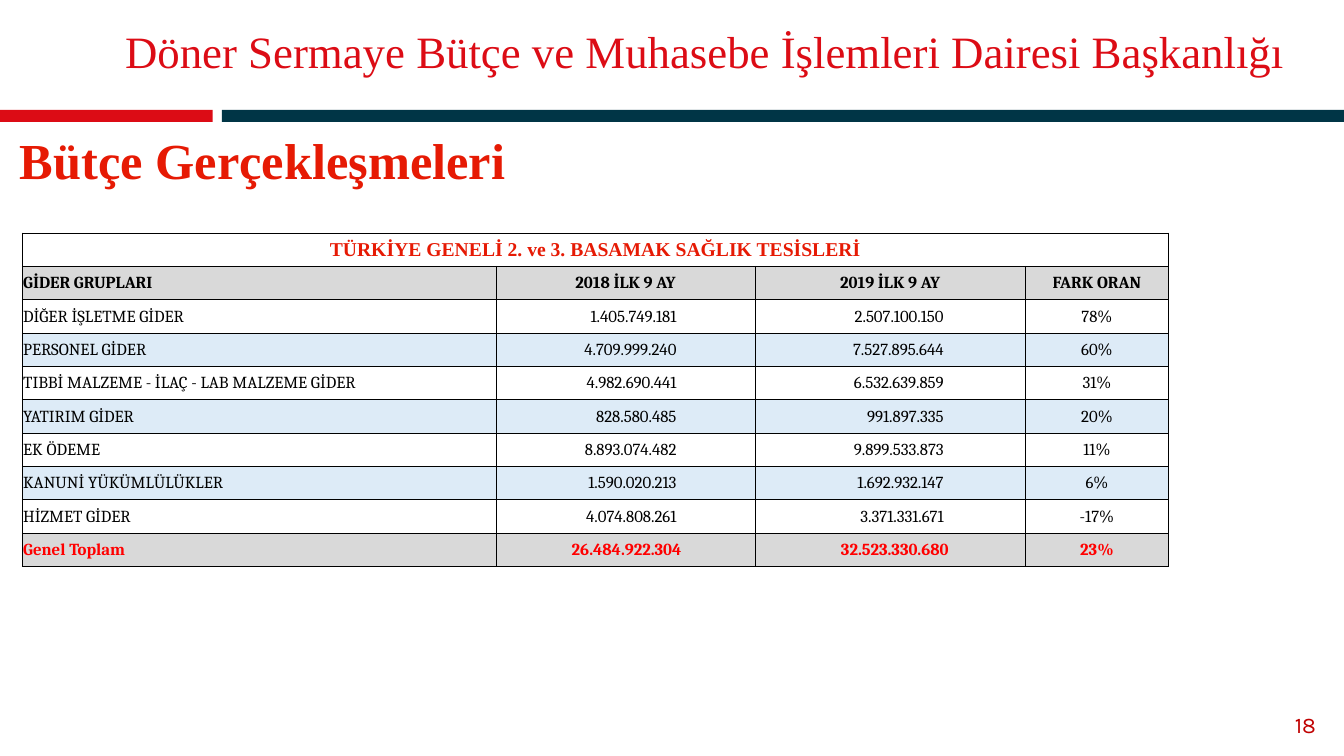
from lxml import etree
from pptx import Presentation
from pptx.dml.color import RGBColor
from pptx.enum.shapes import MSO_SHAPE
from pptx.enum.text import MSO_ANCHOR, MSO_AUTO_SIZE, PP_ALIGN
from pptx.oxml.ns import qn
from pptx.util import Inches, Pt

LEFT, CENTER, RIGHT = PP_ALIGN.LEFT, PP_ALIGN.CENTER, PP_ALIGN.RIGHT
MIDDLE, TOP = MSO_ANCHOR.MIDDLE, MSO_ANCHOR.TOP
RECTANGLE = MSO_SHAPE.RECTANGLE
NO_FIT = MSO_AUTO_SIZE.NONE

COLORS = {
    "red": "DC0C15", "navy": "003546", "heading": "E61A04", "number": "C00000",
    "black": "000000", "total": "FF0000", "gray": "D9D9D9", "blue": "DDEBF7",
}
SERIF = "Times New Roman"
TABLE_FONT = "Cambria"

TABLE_TITLE = "TÜRKİYE GENELİ 2. ve 3. BASAMAK SAĞLIK TESİSLERİ"
HEADER = ("GİDER GRUPLARI", "2018 İLK 9 AY", "2019 İLK 9 AY", "FARK ORAN")
EXPENSES = [
    ("DİĞER İŞLETME GİDER", "1.405.749.181", "2.507.100.150", "78%"),
    ("PERSONEL GİDER", "4.709.999.240", "7.527.895.644", "60%"),
    ("TIBBİ MALZEME - İLAÇ - LAB MALZEME GİDER", "4.982.690.441", "6.532.639.859", "31%"),
    ("YATIRIM GİDER", "828.580.485", "991.897.335", "20%"),
    ("EK ÖDEME", "8.893.074.482", "9.899.533.873", "11%"),
    ("KANUNİ YÜKÜMLÜLÜKLER", "1.590.020.213", "1.692.932.147", "6%"),
    ("HİZMET GİDER", "4.074.808.261", "3.371.331.671", "-17%"),
]
TOTAL = ("Genel Toplam", "26.484.922.304", "32.523.330.680", "23%")
COLUMN_WIDTHS = (4.7, 2.57, 2.68, 1.42)
AMOUNT_MARGINS = {1: 0.78, 2: 0.81}  # right margins of the amount columns


def color(name):
    return RGBColor.from_string(COLORS[name])


def write(frame, text, size, font, ink, align=LEFT, bold=False):
    frame.text = text
    para = frame.paragraphs[0]
    para.alignment = align
    span = para.runs[0]
    span.font.size = Pt(size)
    span.font.name = font
    span.font.bold = bold
    span.font.color.rgb = color(ink)
    return para


def add_label(page, box, text, size, font, ink, align=LEFT, anchor=TOP, bold=False):
    frame = page.shapes.add_textbox(*map(Inches, box)).text_frame
    frame.word_wrap = True
    frame.vertical_anchor = anchor
    return write(frame, text, size, font, ink, align, bold)


def add_title(page, box, text):
    title = page.shapes.title
    title.left, title.top, title.width, title.height = map(Inches, box)
    frame = title.text_frame
    frame.word_wrap = True
    frame.auto_size = NO_FIT
    frame.vertical_anchor = MIDDLE
    write(frame, text, 32, SERIF, "red").line_spacing = 0.9


def add_divider(page, box):
    left, top, width, height = box
    red_width, navy_start = 2.11, 2.2
    bars = ((left, red_width, "red"), (left + navy_start, width - navy_start, "navy"))
    for start, length, fill in bars:
        bar = page.shapes.add_shape(RECTANGLE, *map(Inches, (start, top, length, height)))
        bar.shadow.inherit = False
        bar.fill.solid()
        bar.fill.fore_color.rgb = color(fill)
        bar.line.fill.background()


def add_borders(cell):
    properties = cell._tc.get_or_add_tcPr()
    for side in ("a:lnL", "a:lnR", "a:lnT", "a:lnB"):
        line = etree.SubElement(properties, qn(side), w=str(Pt(0.5)))
        fill = etree.SubElement(line, qn("a:solidFill"))
        etree.SubElement(fill, qn("a:srgbClr"), val=COLORS["black"])


def style_cell(cell, fill, right_margin=0.01):
    add_borders(cell)
    cell.vertical_anchor = MIDDLE
    cell.margin_left = cell.margin_top = Inches(0.01)
    cell.margin_right = Inches(right_margin)
    cell.margin_bottom = 0
    if fill:
        cell.fill.solid()
        cell.fill.fore_color.rgb = color(fill)
    else:
        cell.fill.background()


def add_budget_table(page, box):
    rows = [HEADER, *EXPENSES, TOTAL]
    frame = page.shapes.add_table(len(rows) + 1, len(HEADER), *map(Inches, box))
    table = frame.table
    for column, width in zip(table.columns, COLUMN_WIDTHS):
        column.width = Inches(width)
    for row in table.rows:
        row.height = Inches(box[3] / len(table.rows))

    # Merged heading row
    for cell in table.rows[0].cells:
        style_cell(cell, None)
    heading = table.cell(0, 0)
    heading.merge(table.cell(0, len(HEADER) - 1))
    write(heading.text_frame, TABLE_TITLE, 14, SERIF, "heading", CENTER, True)

    # Column headings, expenses and total
    for number, values in enumerate(rows, start=1):
        is_header, is_total = values is HEADER, values is TOTAL
        emphasized = is_header or is_total
        fill = "gray" if emphasized else "blue" if number % 2 else None
        for position, value in enumerate(values):
            cell = table.cell(number, position)
            align = CENTER if position else LEFT
            margin = 0.01
            if position in AMOUNT_MARGINS and not is_header:
                align = RIGHT
                margin = AMOUNT_MARGINS[position] - (0.05 if is_total else 0)
            style_cell(cell, fill, margin)
            write(cell.text_frame, value, 12, TABLE_FONT,
                  "total" if is_total else "black", align, emphasized)


def build_budget_page(deck):
    page = deck.slides.add_slide(deck.slide_layouts[5])
    add_divider(page, (0, 1.09, 13.33, 0.12))
    add_label(page, (12.25, 6.99, 0.9, 0.4), "18", 16, "Karla", "number", RIGHT, MIDDLE)
    add_title(page, (1.14, 0.14, 12.01, 0.8),
              "Döner Sermaye Bütçe ve Muhasebe İşlemleri Dairesi Başkanlığı")
    subtitle = add_label(page, (0.1, 1.3, 6.14, 0.65), "Bütçe Gerçekleşmeleri",
                         36, SERIF, "heading", bold=True)
    subtitle.line_spacing = 0.9
    add_budget_table(page, (0.22, 2.31, 11.37, 3.31))


def main():
    deck = Presentation()
    deck.slide_width, deck.slide_height = Inches(13.33), Inches(7.5)
    build_budget_page(deck)
    deck.save("out.pptx")


if __name__ == "__main__":
    main()
